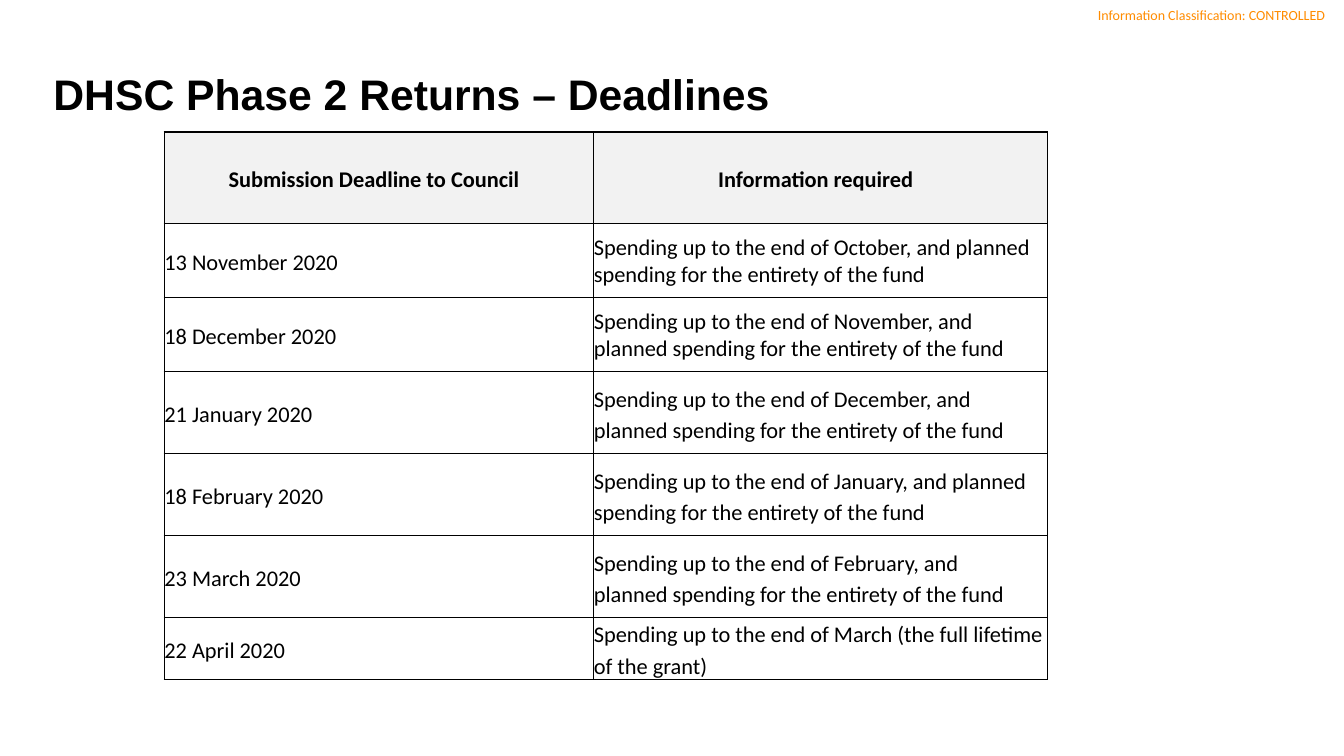
"""Build the slide listing the deadlines of the DHSC phase 2 returns."""
from dataclasses import dataclass

from lxml.etree import SubElement
from pptx import Presentation
from pptx.dml.color import RGBColor as Color
from pptx.enum.text import MSO_ANCHOR as Anchor, MSO_AUTO_SIZE as AutoSize, PP_ALIGN as Align
from pptx.oxml.ns import qn
from pptx.util import Inches, Pt


@dataclass(frozen=True)
class Theme:
    ink: str = "000000"
    label: str = "FF8C00"
    header_fill: str = "F2F2F2"
    title_font: str = "Arial"
    body_font: str = "Calibri"
    title_size: float = 30.5
    body_size: float = 16
    label_size: float = 10
    border: float = 1


theme = Theme()


def add_span(para, text, font, size, color, bold=False):
    span = para.add_run()
    span.text = text
    span.font.name = font
    span.font.size = Pt(size)
    span.font.color.rgb = Color.from_string(color)
    span.font.bold = bold


def set_frame(box, left, top, right, bottom):
    box.margin_left, box.margin_top = Inches(left), Inches(top)
    box.margin_right, box.margin_bottom = Inches(right), Inches(bottom)
    box.vertical_anchor = Anchor.MIDDLE


deck = Presentation()
deck.slide_width, deck.slide_height = Inches(13.33), Inches(7.5)
page = deck.slides.add_slide(deck.slide_layouts[5])

label = page.shapes.add_textbox(Inches(10.71), 0, Inches(2.63), Inches(0.29))
label.text_frame.word_wrap = True
set_frame(label.text_frame, 0, 0, 0.2, 0)
para = label.text_frame.paragraphs[0]
para.alignment = Align.RIGHT
add_span(para, "Information Classification: CONTROLLED",
         theme.body_font, theme.label_size, theme.label)

title = page.shapes.title
title.left, title.top = Inches(0.43), Inches(0.65)
title.width, title.height = Inches(11.91), Inches(0.55)
title.text_frame.auto_size = AutoSize.NONE
set_frame(title.text_frame, 0.1, 0.05, 0.1, 0.05)
para = title.text_frame.paragraphs[0]
para.alignment = Align.LEFT
add_span(para, "DHSC Phase 2 Returns – Deadlines",
         theme.title_font, theme.title_size, theme.ink, True)

planned = ", and planned spending for the entirety of the fund"
rows = [
    ("Submission Deadline to Council", "Information required"),
    ("13 November 2020", "Spending up to the end of October" + planned),
    ("18 December 2020", "Spending up to the end of November" + planned),
    ("21 January 2020", "Spending up to the end of December" + planned),
    ("18 February 2020", "Spending up to the end of January" + planned),
    ("23 March 2020", "Spending up to the end of February" + planned),
    ("22 April 2020", "Spending up to the end of March (the full lifetime of the grant)"),
]
column_widths = (4.26, 4.5)
header_height, row_height = 0.91, 0.59
single_spaced = {(1, 1), (2, 1)}
last_cell = (len(rows) - 1, 1)

frame = page.shapes.add_table(
    len(rows), len(column_widths), Inches(1.63), Inches(1.31),
    Inches(sum(column_widths)), Inches(header_height + row_height * (len(rows) - 1)))
table = frame.table
table.first_row = table.horz_banding = False
for column, width in zip(table.columns, column_widths):
    column.width = Inches(width)

for row_index, texts in enumerate(rows):
    is_header = row_index == 0
    table.rows[row_index].height = Inches(header_height if is_header else row_height)
    for column_index, text in enumerate(texts):
        place = (row_index, column_index)
        cell = table.cell(*place)
        inset = 0 if place == last_cell else 0.1
        set_frame(cell, 0, inset, inset, inset)
        para = cell.text_frame.paragraphs[0]
        para.alignment = Align.CENTER if is_header else Align.LEFT
        para.line_spacing = 1.0 if place in single_spaced else 1.15
        add_span(para, text, theme.body_font, theme.body_size, theme.ink, is_header)
        properties = cell._tc.get_or_add_tcPr()
        for side in ("lnL", "lnR", "lnT", "lnB"):
            line = SubElement(properties, qn(f"a:{side}"), w=str(Pt(theme.border)))
            SubElement(SubElement(line, qn("a:solidFill")), qn("a:srgbClr"), val=theme.ink)
        if is_header:
            cell.fill.solid()
            cell.fill.fore_color.rgb = Color.from_string(theme.header_fill)
        else:
            cell.fill.background()

deck.save("out.pptx")
